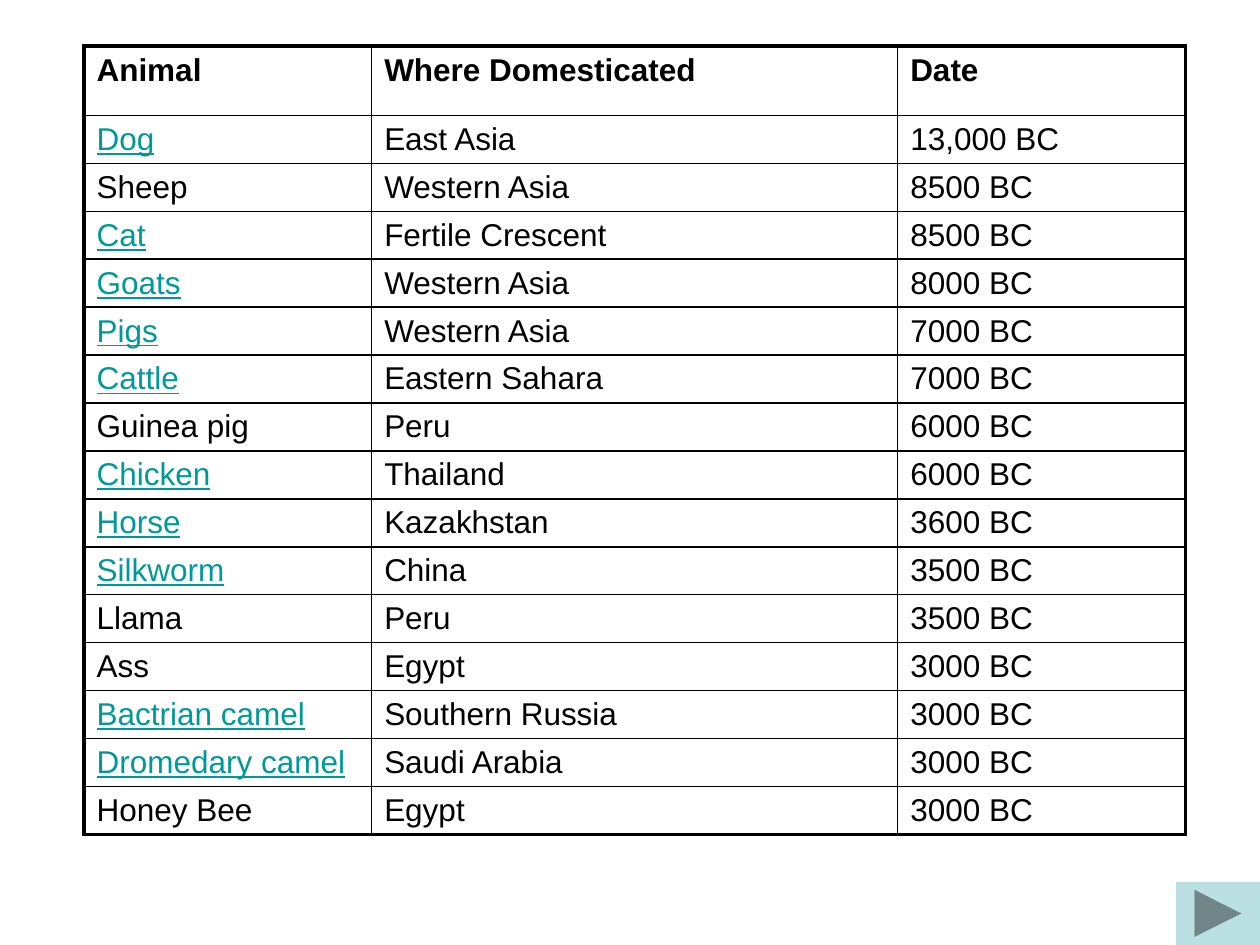
from lxml import etree
from pptx import Presentation
from pptx.dml.color import RGBColor
from pptx.enum.shapes import MSO_SHAPE
from pptx.oxml.ns import qn
from pptx.util import Inches, Pt

FORWARD_BUTTON = MSO_SHAPE.ACTION_BUTTON_FORWARD_OR_NEXT

# Grid: 60 columns by 45 rows on a 10 by 7.5 inch slide
GRID_COLUMNS, GRID_ROWS = 60, 45
COLUMN_WIDTHS = [13.7, 25.05, 13.7]
HEADER_HEIGHT, BODY_HEIGHT = 3.3, 2.28

HEADINGS = ["Animal", "Where Domesticated", "Date"]
ANIMALS = [
    ("Dog", "East Asia", "13,000 BC"),
    ("Sheep", "Western Asia", "8500 BC"),
    ("Cat", "Fertile Crescent", "8500 BC"),
    ("Goats", "Western Asia", "8000 BC"),
    ("Pigs", "Western Asia", "7000 BC"),
    ("Cattle", "Eastern Sahara", "7000 BC"),
    ("Guinea pig", "Peru", "6000 BC"),
    ("Chicken", "Thailand", "6000 BC"),
    ("Horse", "Kazakhstan", "3600 BC"),
    ("Silkworm", "China", "3500 BC"),
    ("Llama", "Peru", "3500 BC"),
    ("Ass", "Egypt", "3000 BC"),
    ("Bactrian camel", "Southern Russia", "3000 BC"),
    ("Dromedary camel", "Saudi Arabia", "3000 BC"),
    ("Honey Bee", "Egypt", "3000 BC"),
]
UNLINKED = {"Sheep", "Guinea pig", "Llama", "Ass", "Honey Bee"}


def rgb(hex_colour):
    return RGBColor.from_string(hex_colour)


class SlideBuilder:
    text_colour = "000000"
    link_colour = "009999"
    button_colour = "BBE0E3"
    outer_line, inner_line = 2.25, 1
    base_font = {"name": "Arial", "size": Pt(18)}

    def __init__(self, deck):
        self.column = deck.slide_width / GRID_COLUMNS
        self.row = deck.slide_height / GRID_ROWS
        self.slide = deck.slides.add_slide(deck.slide_layouts[6])

    def box(self, left, top, width, height):
        return (round(left * self.column), round(top * self.row),
                round(width * self.column), round(height * self.row))

    def cell_text(self, cell, text, colour, **formats):
        run = cell.text_frame.paragraphs[0].add_run()
        run.text = text
        for attribute, value in {**self.base_font, **formats}.items():
            setattr(run.font, attribute, value)
        run.font.color.rgb = rgb(colour)

    def borders(self, cell, outer_sides):
        properties = cell._tc.get_or_add_tcPr()
        for position, side in enumerate("LRTB"):
            width = self.outer_line if side in outer_sides else self.inner_line
            line = etree.Element(qn(f"a:ln{side}"), w=str(Pt(width)))
            fill = etree.SubElement(line, qn("a:solidFill"))
            etree.SubElement(fill, qn("a:srgbClr"), val=self.text_colour)
            properties.insert(position, line)

    def table(self, left, top, headings, records):
        heights = [HEADER_HEIGHT] + [BODY_HEIGHT] * len(records)
        frame = self.slide.shapes.add_table(
            len(heights), len(headings),
            *self.box(left, top, sum(COLUMN_WIDTHS), sum(heights)))
        table = frame.table
        table.first_row = table.horz_banding = False
        for column, width in zip(table.columns, COLUMN_WIDTHS):
            column.width = round(width * self.column)
        for row, height in zip(table.rows, heights):
            row.height = round(height * self.row)

        last_row, last_column = len(records), len(headings) - 1
        for r, record in enumerate([headings, *records]):
            for c, text in enumerate(record):
                cell = table.cell(r, c)
                cell.fill.background()
                linked = r > 0 and c == 0 and text not in UNLINKED
                self.cell_text(cell, text,
                               self.link_colour if linked else self.text_colour,
                               bold=r == 0, underline=linked)
                edges = {"L": c == 0, "R": c == last_column,
                         "T": r == 0, "B": r == last_row}
                self.borders(cell, [side for side, outer in edges.items() if outer])

    def next_button(self, left, top, width, height):
        button = self.slide.shapes.add_shape(
            FORWARD_BUTTON, *self.box(left, top, width, height))
        button.shadow.inherit = False
        button.fill.solid()
        button.fill.fore_color.rgb = rgb(self.button_colour)
        button.line.fill.background()


def main():
    deck = Presentation()
    deck.slide_width, deck.slide_height = Inches(10), Inches(7.5)
    builder = SlideBuilder(deck)

    # Domestication table
    builder.table(4, 2.2, HEADINGS, ANIMALS)

    # Button in the bottom right corner
    builder.next_button(56, 42, 4, 3)

    deck.save("out.pptx")


if __name__ == "__main__":
    main()
